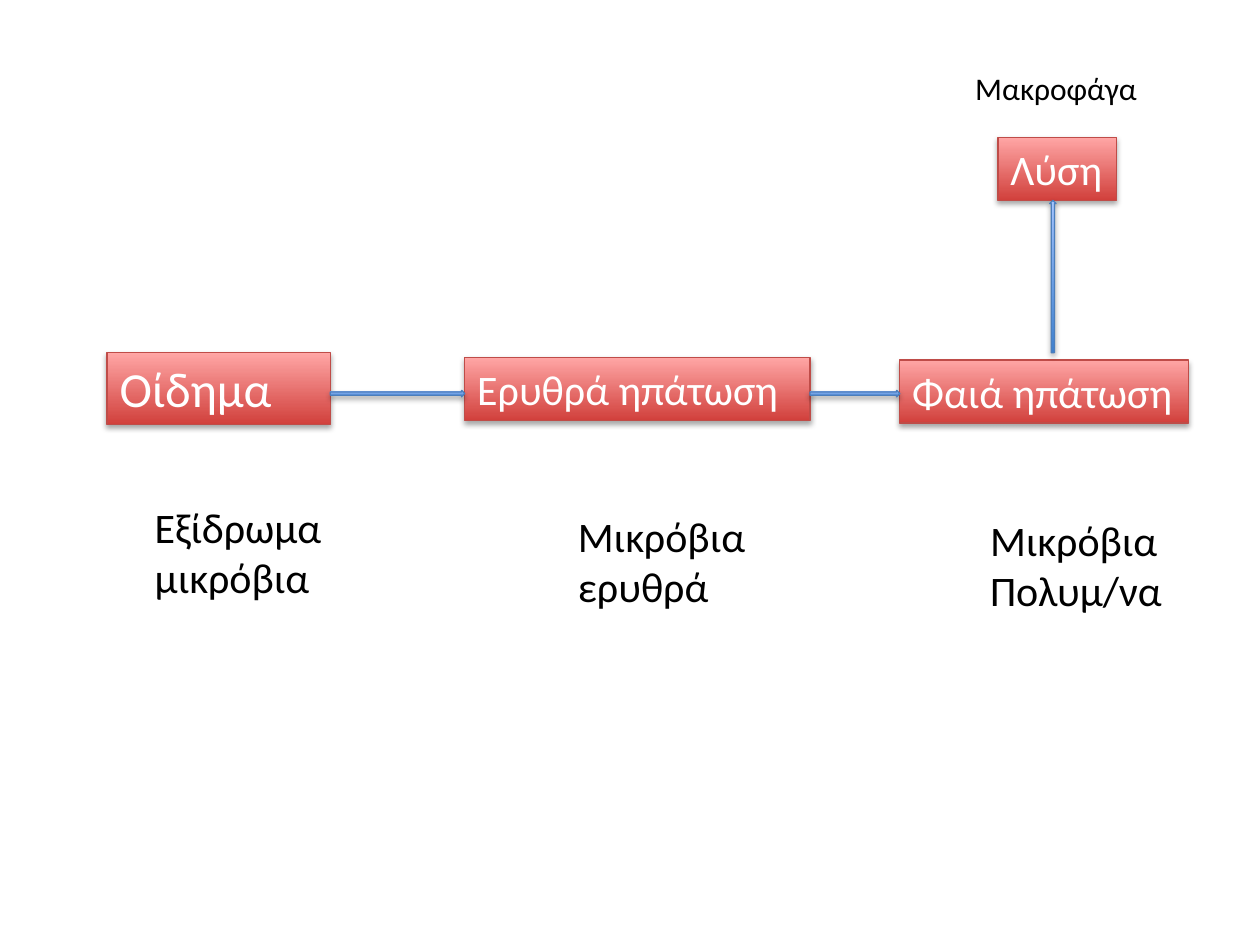
import lxml.etree
import pptx
import pptx.dml.color
import pptx.enum.shapes
import pptx.enum.text
import pptx.oxml.ns
import pptx.util

Cm = pptx.util.Cm
Pt = pptx.util.Pt
RGB = pptx.dml.color.RGBColor.from_string
SHAPES = pptx.enum.shapes.MSO_SHAPE
qn = pptx.oxml.ns.qn

COLORS = {
    "stage": ("D1403C", "FFA6A5", "BF4C48"),
    "arrow": ("3F80CE", "A4C4FF", "4B7EBC"),
    "stage_text": "FFFFFF",
    "note_text": "000000",
    "shadow": "000000",
}
FRAME_FORMAT = {
    "auto_size": pptx.enum.text.MSO_AUTO_SIZE.SHAPE_TO_FIT_TEXT,
    "vertical_anchor": pptx.enum.text.MSO_ANCHOR.TOP,
}
SHADOW = {"blurRad": "40000", "dist": "23000", "dir": "5400000", "rotWithShape": "0"}

deck = pptx.Presentation()
deck.slide_width, deck.slide_height = Cm(25.4), Cm(19.05)
slide = deck.slides.add_slide(deck.slide_layouts[6])


def add_glossy(kind, colors, left, top, width, height):
    glossy = slide.shapes.add_shape(kind, Cm(left), Cm(top), Cm(width), Cm(height))
    dark, light, edge = colors
    glossy.fill.gradient()
    glossy.fill.gradient_angle = 90
    for stop, color in zip(glossy.fill.gradient_stops, (dark, light)):
        stop.color.rgb = RGB(color)
    glossy.line.color.rgb = RGB(edge)
    glossy.line.width = Pt(0.75)
    glossy.shadow.inherit = False
    effects = glossy.element.spPr.find(qn("a:effectLst"))
    shade = lxml.etree.SubElement(effects, qn("a:outerShdw"), SHADOW)
    tone = lxml.etree.SubElement(shade, qn("a:srgbClr"), val=COLORS["shadow"])
    lxml.etree.SubElement(tone, qn("a:alpha"), val="35000")
    return glossy


def write(holder, lines, size, color, wrap):
    frame = holder.text_frame
    frame.text = "\n".join(lines)
    for name, value in {**FRAME_FORMAT, "word_wrap": wrap}.items():
        setattr(frame, name, value)
    font_format = {"name": "Calibri", "size": Pt(size)}
    for paragraph in frame.paragraphs:
        paragraph.alignment = pptx.enum.text.PP_ALIGN.LEFT
        for name, value in font_format.items():
            setattr(paragraph.runs[0].font, name, value)
        paragraph.runs[0].font.color.rgb = RGB(color)


stages = [
    ("Οίδημα", 28, True, (2.16, 7.11, 4.5, 1.45)),
    ("Ερυθρά ηπάτωση", 24, True, (9.37, 7.21, 6.96, 1.27)),
    ("Φαιά ηπάτωση", 24, False, (18.14, 7.26, 5.82, 1.27)),
    ("Λύση", 24, False, (20.12, 2.77, 2.39, 1.27)),
]
for label, size, wrap, place in stages:
    stage = add_glossy(SHAPES.RECTANGLE, COLORS["stage"], *place)
    write(stage, [label], size, COLORS["stage_text"], wrap)

thickness = 0.13
oedema, red, grey, lysis = [place for *_, place in stages]
for before, after in ((oedema, red), (red, grey)):
    start = before[0] + before[2]
    add_glossy(SHAPES.RIGHT_ARROW, COLORS["arrow"], start, 7.87, after[0] - start, thickness)
lysis_bottom = lysis[1] + lysis[3]
add_glossy(SHAPES.UP_ARROW, COLORS["arrow"], 21.16, lysis_bottom, thickness, oedema[1] - lysis_bottom)

notes = [
    (["Εξίδρωμα", "μικρόβια"], 24, (2.87, 9.98, 3.91, 2.31)),
    (["Μικρόβια", "ερυθρά"], 24, (11.4, 10.16, 3.91, 2.31)),
    (["Μικρόβια", "Πολυμ/να"], 24, (19.71, 10.24, 4.01, 2.31)),
    (["Μακροφάγα"], 18, (19.41, 1.27, 3.81, 1.02)),
]
for lines, size, place in notes:
    note = slide.shapes.add_textbox(*map(Cm, place))
    write(note, lines, size, COLORS["note_text"], False)

deck.save("out.pptx")
